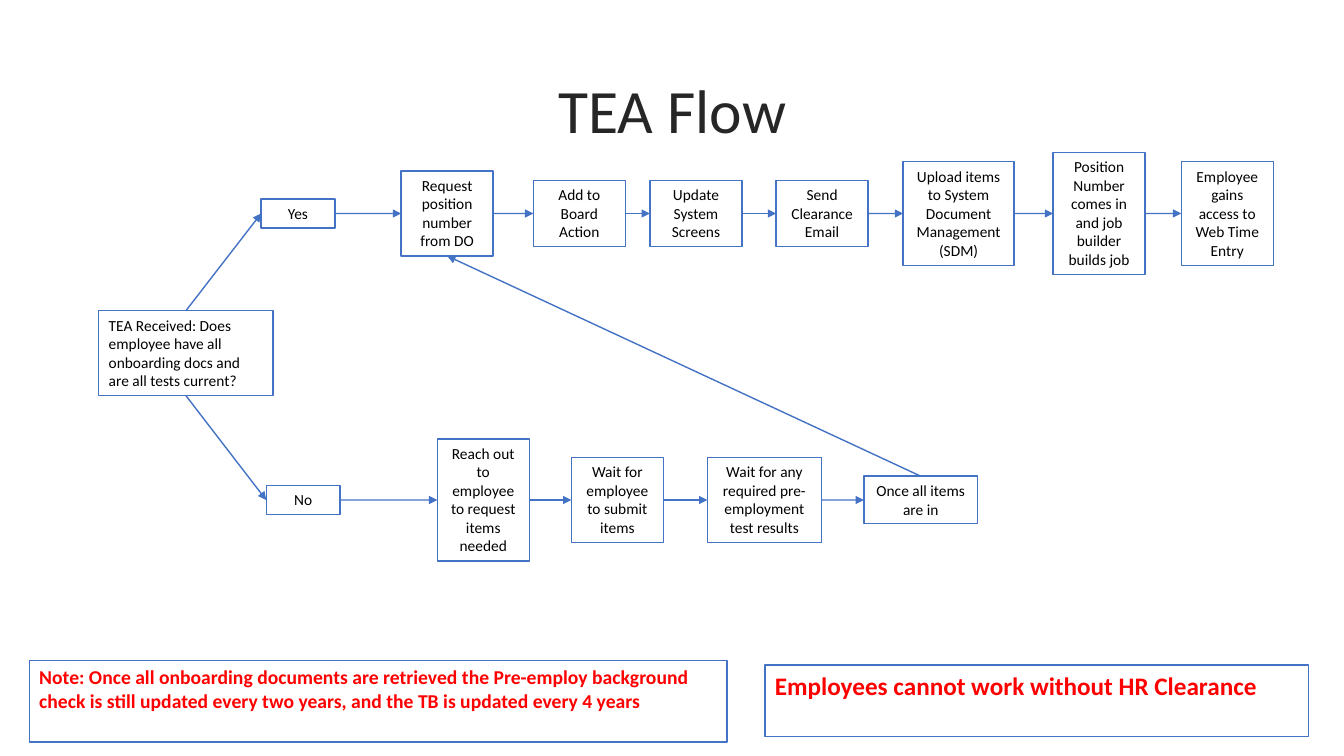
from lxml.etree import SubElement
from pptx import Presentation
from pptx.dml.color import RGBColor
from pptx.enum.shapes import MSO_CONNECTOR as CONN, MSO_SHAPE as SHAPE
from pptx.enum.text import MSO_ANCHOR as ANCHOR, PP_ALIGN as ALIGN
from pptx.oxml.ns import qn
from pptx.util import Cm, Pt

BLUE = RGBColor(0x44, 0x72, 0xC4)
WHITE = RGBColor(0xFF, 0xFF, 0xFF)
BLACK = RGBColor(0, 0, 0)
RED = RGBColor(0xFF, 0, 0)
DARK = RGBColor(0x26, 0x26, 0x26)

TITLE = "TEA Flow"
START = ("TEA Received: Does employee have all onboarding docs and are all tests current?", 2.49, 4.39, 4)
YES_ROW = [
    ("Yes", 6.58, 1.86, 1),
    ("Request position number from DO", 10.11, 2.32, 4),
    ("Add to Board Action", 13.44, 2.32, 3),
    ("Update System Screens", 16.38, 2.32, 3),
    ("Send Clearance Email", 19.56, 2.32, 3),
    ("Upload items to System Document Management (SDM)", 22.76, 2.8, 5),
    ("Position Number comes in and job builder builds job", 26.54, 2.32, 6),
    ("Employee gains access to Web Time Entry", 29.77, 2.32, 5),
]
NO_ROW = [
    ("No", 6.71, 1.86, 1),
    ("Reach out to employee to request items needed", 11.02, 2.32, 6),
    ("Wait for employee to submit items", 14.4, 2.32, 4),
    ("Wait for any required pre-employment test results", 17.83, 2.87, 4),
    ("Once all items are in", 21.77, 2.87, 2),
]
NOTES = [
    ("Note: Once all onboarding documents are retrieved the Pre-employ background check is still "
     "updated every two years, and the TB is updated every 4 years", (0.74, 16.64, 17.58, 2.06), 14),
    ("Employees cannot work without HR Clearance", (19.28, 16.76, 13.69, 1.8), 18),
]
YES_Y, START_Y, NO_Y = 5.38, 8.9, 12.6
LINE_H, PADDING = 0.47, 0.26
TOP, LEFT, BOTTOM, RIGHT = range(4)

prs = Presentation()
prs.slide_width, prs.slide_height = Cm(33.87), Cm(19.05)
s = prs.slides.add_slide(prs.slide_layouts[6])


def write(sp, text, size, color, align, anchor=ANCHOR.TOP, bold=False):
    tf = sp.text_frame
    tf.word_wrap = True
    tf.vertical_anchor = anchor
    p = tf.paragraphs[0]
    p.alignment = align
    r = p.add_run()
    r.text = text
    for name, value in {"name": "Calibri", "size": Pt(size), "bold": bold}.items():
        setattr(r.font, name, value)
    r.font.color.rgb = color
    return p


def add_box(text, place, size=11, color=BLACK, align=ALIGN.CENTER, bold=False):
    sp = s.shapes.add_shape(SHAPE.RECTANGLE, *map(Cm, place))
    sp.shadow.inherit = False
    sp.fill.solid()
    sp.fill.fore_color.rgb = WHITE
    sp.line.color.rgb = BLUE
    sp.line.width = Pt(1)
    write(sp, text, size, color, align, bold=bold)
    return sp


def add_step(step, middle, align=ALIGN.CENTER):
    text, left, width, lines = step
    height = lines * LINE_H + PADDING
    return add_box(text, (left, middle - height / 2, width, height), align=align)


def add_arrow(source, source_side, target, target_side):
    line = s.shapes.add_connector(CONN.STRAIGHT, 0, 0, 0, 0)
    line.begin_connect(source, source_side)
    line.end_connect(target, target_side)
    line.line.color.rgb = BLUE
    line.line.width = Pt(1)
    props = line.element.spPr
    SubElement(props.find(qn("a:ln")), qn("a:tailEnd"), type="triangle")
    SubElement(props, qn("a:effectLst"))


start = add_step(START, START_Y, ALIGN.LEFT)
yes_boxes = [add_step(step, YES_Y) for step in YES_ROW]
no_boxes = [add_step(step, NO_Y) for step in NO_ROW]
for text, place, size in NOTES:
    add_box(text, place, size, RED, ALIGN.LEFT, True)

for boxes in (yes_boxes, no_boxes):
    for source, target in zip(boxes, boxes[1:]):
        add_arrow(source, RIGHT, target, LEFT)
add_arrow(start, TOP, yes_boxes[0], LEFT)
add_arrow(start, BOTTOM, no_boxes[0], LEFT)
add_arrow(no_boxes[-1], TOP, yes_boxes[1], BOTTOM)

title = s.shapes.add_textbox(Cm(2.34), Cm(1.02), Cm(29.21), Cm(3.68))
write(title, TITLE, 44, DARK, ALIGN.CENTER, ANCHOR.MIDDLE).line_spacing = 0.9

prs.save("out.pptx")
